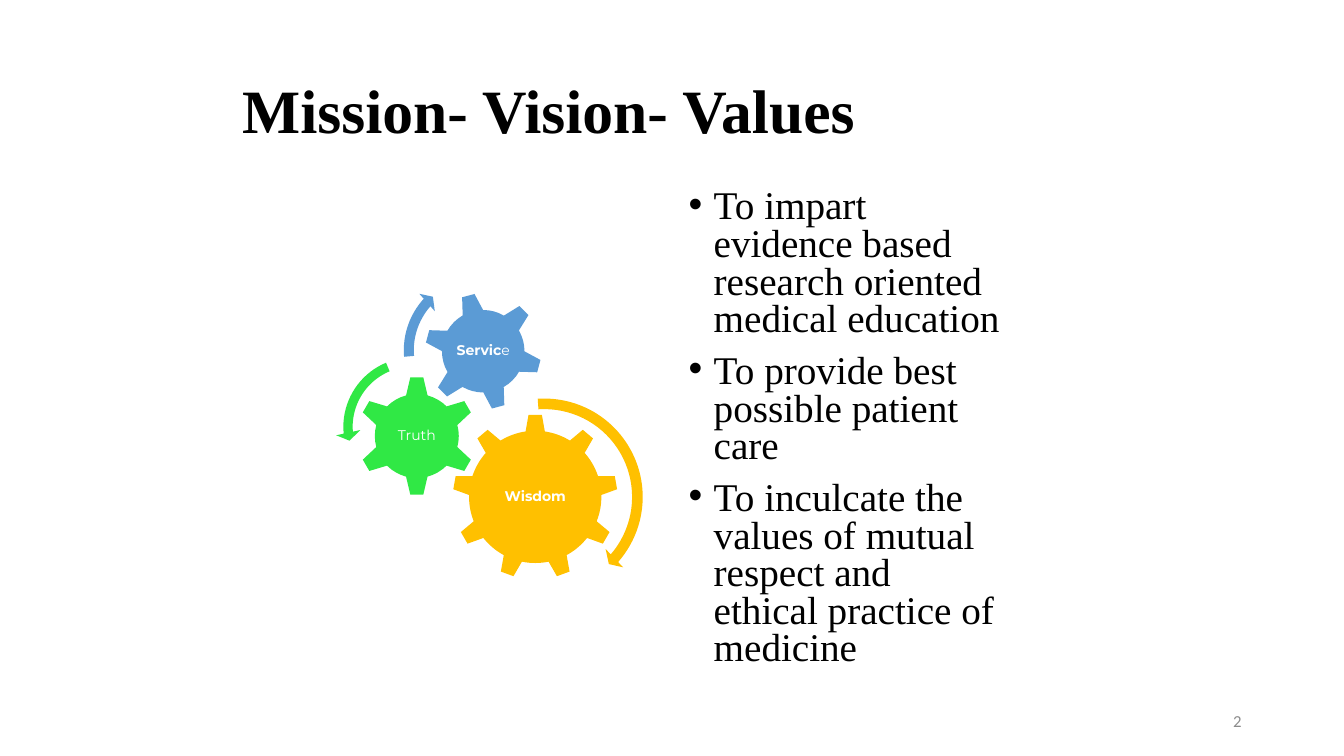
"""Build the mission, vision and values slide with three interlocking gears."""
import pptx
import pptx.dml.color
import pptx.enum.shapes
import pptx.enum.text
import pptx.util

Pt = pptx.util.Pt
Shape = pptx.enum.shapes.MSO_SHAPE
Align = pptx.enum.text.PP_ALIGN
Anchor = pptx.enum.text.MSO_ANCHOR

SERIF = "Times New Roman"
GOLD, GREEN, BLUE = "FFC000", "30E845", "5B9BD5"

GEARS = [
    (Shape.GEAR_9, 323.3, 295.9, 118.1, 0, GOLD, (24, 28.5), [("Wisdom", True)]),
    (Shape.GEAR_6, 254.9, 268.6, 85.7, 0, GREEN, (21.6, 21.6), [("Truth", False)]),
    (Shape.GEAR_6, 303.1, 208.8, 84.2, 345, BLUE, (18.5, 18.5), [("Servic", True), ("e", False)]),
]
ARROWS = [
    (Shape.CIRCULAR_ARROW, 313.2, 279.4, 151.2, GOLD, (0.05, 2.99, 24.67, 159.72, 0.06)),
    (Shape.LEFT_CIRCULAR_ARROW, 239.8, 249.8, 110.2, GREEN, (0.06, 4.3, 104.89, 148.38, 0.08)),
    (Shape.CIRCULAR_ARROW, 283.7, 190.8, 118.8, BLUE, (0.06, 3.94, 133.14, 105.08, 0.07)),
]
GOALS = [
    "To impart evidence based research oriented medical education",
    "To provide best possible patient care",
    "To inculcate the values of mutual respect and ethical practice of medicine",
]


def colour(value):
    return pptx.dml.color.RGBColor.from_string(value)


class Slide:
    def __init__(self, page):
        self.page = page

    def place(self, shape, left, top, width, height):
        shape.left, shape.top = Pt(left), Pt(top)
        shape.width, shape.height = Pt(width), Pt(height)

    def style(self, paragraph, font, size, ink, bold=False):
        for span in paragraph.runs:
            span.font.name, span.font.size, span.font.bold = font, Pt(size), bold
            span.font.color.rgb = colour(ink)

    def title(self, text):
        box = self.page.shapes.title
        self.place(box, 66, 28.8, 828, 104.4)
        frame = box.text_frame
        frame.text = text
        frame.auto_size = pptx.enum.text.MSO_AUTO_SIZE.NONE
        frame.vertical_anchor = Anchor.MIDDLE
        frame.margin_left = Pt(107)
        para = frame.paragraphs[0]
        para.alignment, para.line_spacing = Align.LEFT, 0.9
        self.style(para, SERIF, 44, "000000", True)

    def bullets(self, lines):
        box = self.page.placeholders[1]
        self.place(box, 484.6, 131.8, 239, 350.6)
        frame = box.text_frame
        frame.text = "\n".join(lines)
        frame.auto_size = pptx.enum.text.MSO_AUTO_SIZE.NONE
        for para in frame.paragraphs:
            para.line_spacing, para.space_before = 0.8, Pt(10)
            properties = para._p.get_or_add_pPr()
            properties.set("marL", str(Pt(18)))
            properties.set("indent", str(-Pt(18)))
            self.style(para, SERIF, 28, "000000")

    def figure(self, kind, left, top, size, fill):
        shape = self.page.shapes.add_shape(kind, Pt(left), Pt(top), Pt(size), Pt(size))
        shape.shadow.inherit = False
        shape.fill.solid()
        shape.fill.fore_color.rgb = colour(fill)
        shape.line.fill.background()
        return shape

    def text(self, text, left, top, width, height, align):
        box = self.page.shapes.add_textbox(Pt(left), Pt(top), Pt(width), Pt(height))
        frame = box.text_frame
        frame.text = text
        frame.word_wrap = True
        frame.vertical_anchor = Anchor.MIDDLE
        frame.paragraphs[0].alignment = align
        return frame

    def gear(self, kind, left, top, size, turn, fill, inset, label):
        self.figure(kind, left, top, size, fill).rotation = turn
        across, down = inset
        frame = self.text(label[0][0], left + across, top + down,
                          size - 2 * across, size - 2 * down, Align.CENTER)
        frame.margin_left = frame.margin_right = Pt(1)
        frame.margin_top = frame.margin_bottom = Pt(1)
        para = frame.paragraphs[0]
        para.line_spacing = 0.9
        for text, _ in label[1:]:
            para.add_run().text = text
        self.style(para, "Montserrat", 10, "FFFFFF")
        for span, (_, bold) in zip(para.runs, label):
            span.font.bold = bold

    def arrow(self, kind, left, top, size, fill, bends):
        shape = self.figure(kind, left, top, size, fill)
        for index, bend in enumerate(bends):
            shape.adjustments[index] = bend

    def number(self, text):
        frame = self.text(text, 678, 500.4, 216, 28.8, Align.RIGHT)
        self.style(frame.paragraphs[0], "Calibri", 12, "8C8C8C")


def main():
    deck = pptx.Presentation()
    deck.slide_width, deck.slide_height = Pt(960), Pt(540)
    slide = Slide(deck.slides.add_slide(deck.slide_layouts[1]))
    for gear in GEARS:
        slide.gear(*gear)
    for arrow in ARROWS:
        slide.arrow(*arrow)
    slide.title("Mission- Vision- Values")
    slide.bullets(GOALS)
    slide.number("2")
    deck.save("out.pptx")


if __name__ == "__main__":
    main()
